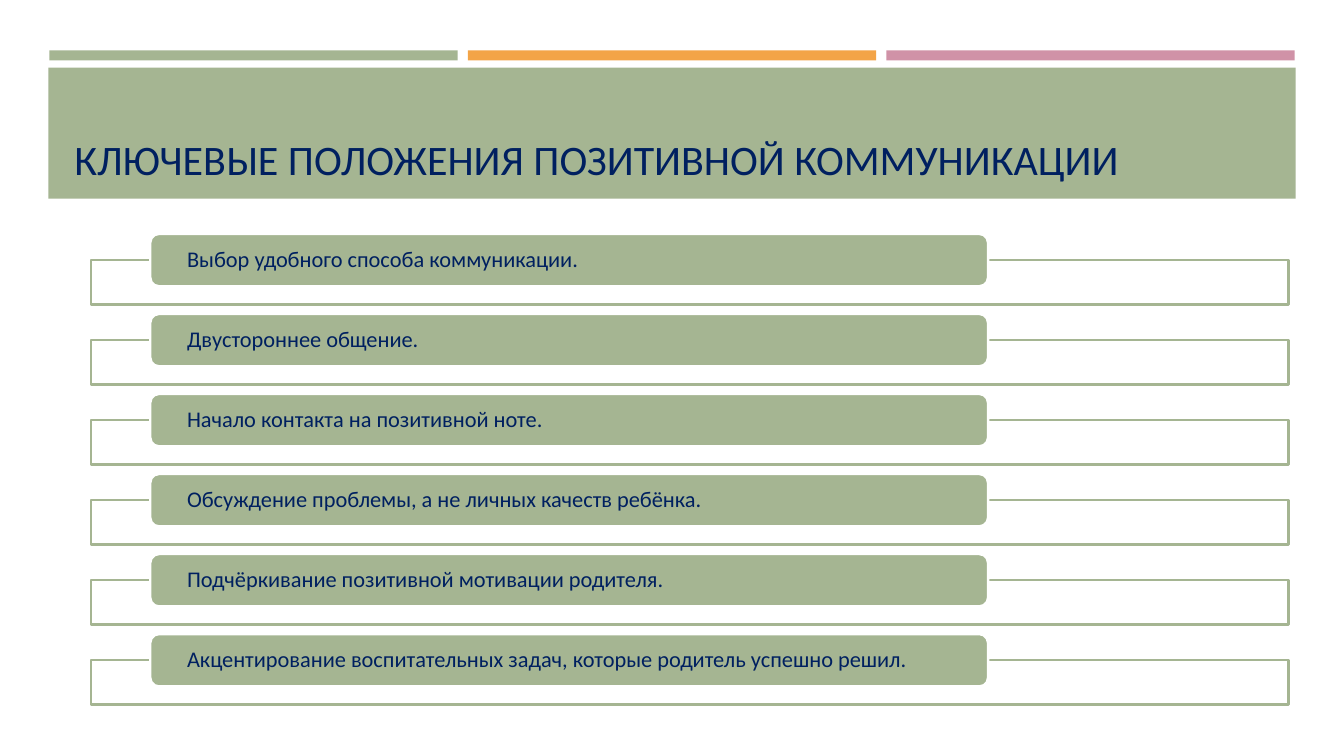
import pptx
import pptx.util
import pptx.dml.color
import pptx.enum.shapes
import pptx.enum.text
import lxml.etree

Inches = pptx.util.Inches
Pt = pptx.util.Pt
SHAPE = pptx.enum.shapes.MSO_SHAPE
ANCHOR = pptx.enum.text.MSO_ANCHOR

TITLE = "КЛЮЧЕВЫЕ ПОЛОЖЕНИЯ ПОЗИТИВНОЙ КОММУНИКАЦИИ"
PRINCIPLES = [
    "Выбор удобного способа коммуникации.",
    "Двустороннее общение.",
    "Начало контакта на позитивной ноте.",
    "Обсуждение проблемы, а не личных качеств ребёнка.",
    "Подчёркивание позитивной мотивации родителя.",
    "Акцентирование воспитательных задач, которые родитель успешно решил.",
]
COLORS = {"green": "A5B592", "orange": "F3A447", "pink": "D092A7",
          "white": "FFFFFF", "navy": "002060"}
STRIPES = ["green", "orange", "pink"]
STRIPE_LEFT, STRIPE_PITCH = 0.49, 4.15
FIRST_TOP, LAST_TOP = 2.58, 6.55
LABEL_RISE = 0.26


def rgb(name):
    return pptx.dml.color.RGBColor.from_string(COLORS[name])


def add_block(slide, kind, box, fill, line=None):
    sp = slide.shapes.add_shape(kind, *map(Inches, box))
    sp.shadow.inherit = False
    sp.fill.solid()
    sp.fill.fore_color.rgb = rgb(fill)
    if line:
        sp.line.color.rgb = rgb(line)
        sp.line.width = Pt(1.75)
    else:
        sp.line.fill.background()
    return sp


def set_alpha(sp, percent):
    color = sp.fill._xPr.find(".//" + pptx.oxml.ns.qn("a:srgbClr"))
    alpha = lxml.etree.SubElement(color, pptx.oxml.ns.qn("a:alpha"))
    alpha.set("val", str(percent * 1000))


def write(sp, text, size, frame):
    """Fill a shape with one left-aligned line; frame holds text frame settings."""
    tf = sp.text_frame
    for name, value in frame.items():
        setattr(tf, name, value)
    p = tf.paragraphs[0]
    p.alignment = pptx.enum.text.PP_ALIGN.LEFT
    p.line_spacing = 0.9
    r = p.add_run()
    r.text = text
    for name, value in {"name": "Calibri", "size": Pt(size)}.items():
        setattr(r.font, name, value)
    r.font.color.rgb = rgb("navy")


def main():
    prs = pptx.Presentation()
    prs.slide_width, prs.slide_height = Inches(13.33), Inches(7.5)
    slide = prs.slides.add_slide(prs.slide_layouts[6])

    for i, color in enumerate(STRIPES):
        box = (STRIPE_LEFT + i * STRIPE_PITCH, 0.5, 4.05, 0.1)
        add_block(slide, SHAPE.RECTANGLE, box, color)

    add_block(slide, SHAPE.RECTANGLE, (0.48, 0.67, 12.37, 1.3), "green")
    title = slide.shapes.add_textbox(*map(Inches, (0.64, 0.77, 12.06, 1.11)))
    write(title, TITLE, 30, {"word_wrap": True, "vertical_anchor": ANCHOR.BOTTOM})

    label_frame = {"word_wrap": True, "vertical_anchor": ANCHOR.MIDDLE,
                   "margin_left": Inches(0.34), "margin_right": Inches(0.34),
                   "margin_top": 0, "margin_bottom": 0}
    pitch = (LAST_TOP - FIRST_TOP) / (len(PRINCIPLES) - 1)
    for i, text in enumerate(PRINCIPLES):
        top = FIRST_TOP + i * pitch
        frame = add_block(slide, SHAPE.RECTANGLE, (0.9, top, 11.88, 0.44),
                          "white", "green")
        set_alpha(frame, 90)
        label = add_block(slide, SHAPE.ROUNDED_RECTANGLE,
                          (1.49, top - LABEL_RISE, 8.31, 0.52), "green", "white")
        write(label, text, 16, label_frame)

    prs.save("out.pptx")


if __name__ == "__main__":
    main()
